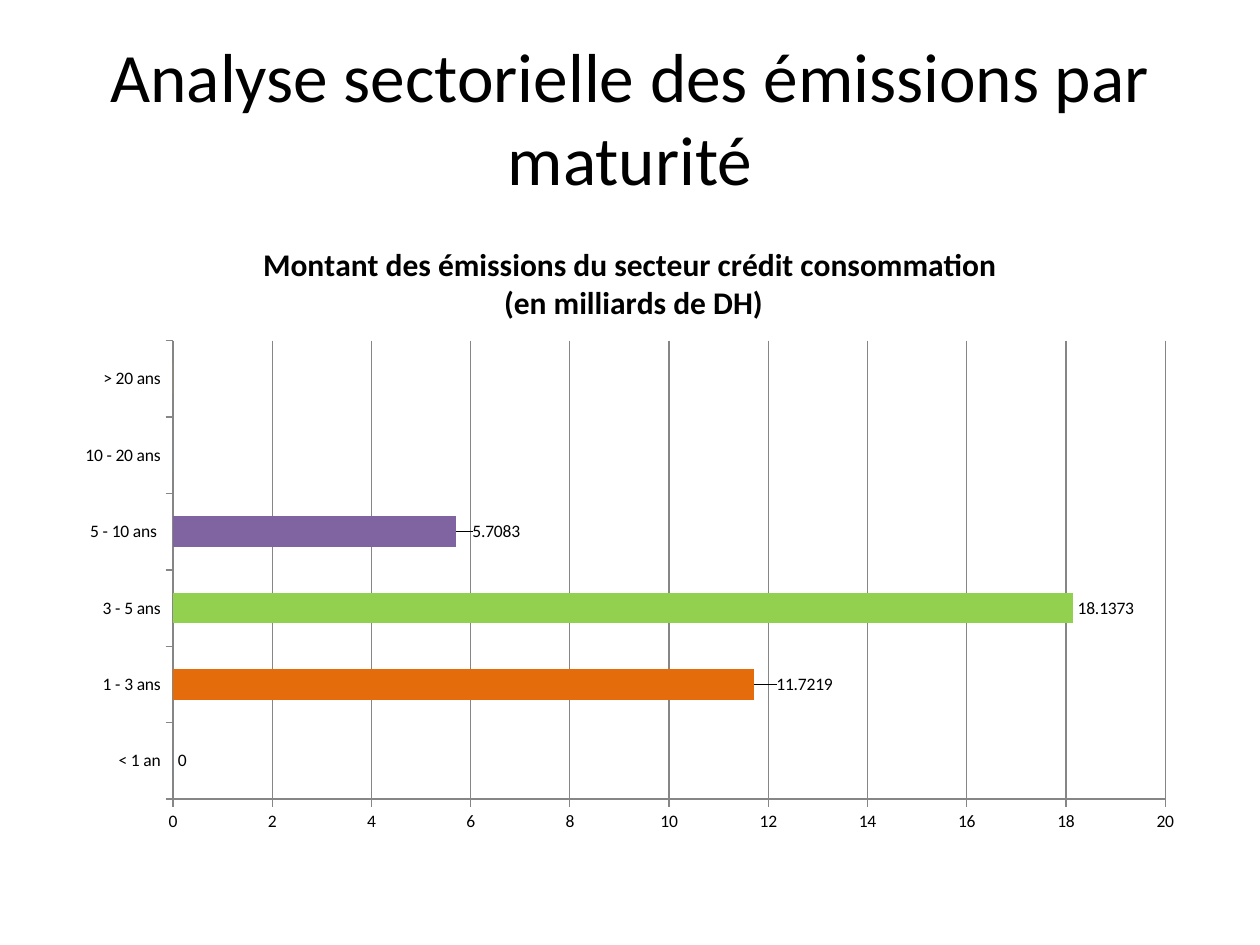
from dataclasses import dataclass

from pptx import Presentation
from pptx.chart.data import CategoryChartData
from pptx.dml.color import RGBColor
from pptx.enum.chart import XL_CHART_TYPE, XL_LABEL_POSITION, XL_TICK_MARK
from pptx.enum.text import MSO_ANCHOR, MSO_AUTO_SIZE, PP_ALIGN
from pptx.oxml import parse_xml
from pptx.util import Inches, Pt

BAR_CLUSTERED = XL_CHART_TYPE.BAR_CLUSTERED
OUTSIDE_END = XL_LABEL_POSITION.OUTSIDE_END
TICK_OUTSIDE = XL_TICK_MARK.OUTSIDE
CHART_NS = 'xmlns:c="http://schemas.openxmlformats.org/drawingml/2006/chart"'
TITLE_ONLY = 5


@dataclass(frozen=True)
class Theme:
    font: str = "Calibri"
    text: RGBColor = RGBColor(0, 0, 0)
    axis: RGBColor = RGBColor(0x86, 0x86, 0x86)
    title_size: Pt = Pt(39.6)
    chart_title_size: Pt = Pt(18)
    chart_size: Pt = Pt(10)


theme = Theme()


def set_font(font, size, bold=False):
    font.name = theme.font
    font.size = size
    font.bold = bold
    font.color.rgb = theme.text


def manual_layout(**values):
    """Return a c:layout element holding the given settings, in order."""
    settings = "".join(f'<c:{name} val="{value}"/>' for name, value in values.items())
    return parse_xml(
        f"<c:layout {CHART_NS}><c:manualLayout>{settings}</c:manualLayout></c:layout>"
    )


presentation = Presentation()
presentation.slide_width = Inches(10)
presentation.slide_height = Inches(7.5)
slide = presentation.slides.add_slide(presentation.slide_layouts[TITLE_ONLY])

# Slide title
title = slide.shapes.title
title.left, title.top = Inches(0.5), Inches(0.3)
title.width, title.height = Inches(9), Inches(1.25)
title.text_frame.text = "Analyse sectorielle des émissions par maturité"
title.text_frame.word_wrap = True
title.text_frame.auto_size = MSO_AUTO_SIZE.NONE
title.text_frame.vertical_anchor = MSO_ANCHOR.MIDDLE
paragraph = title.text_frame.paragraphs[0]
paragraph.alignment = PP_ALIGN.CENTER
set_font(paragraph.font, theme.title_size)

# Maturities: category, amount, bar colour, label shift (None hides the label)
maturities = [
    ("< 1 an", 0, "4F81BD", 0),
    ("1 - 3 ans", 11.7219, "E46C0A", 0.015),
    ("3 - 5 ans", 18.1373, "92D050", 0),
    ("5 - 10 ans ", 5.7083, "8064A2", 0.01),
    ("10 - 20 ans", 0, "4BACC6", None),
    ("> 20 ans", 0, "F79646", None),
]
chart_data = CategoryChartData()
chart_data.categories = [maturity[0] for maturity in maturities]
chart_data.add_series("Series 1", [maturity[1] for maturity in maturities])
chart = slide.shapes.add_chart(
    BAR_CLUSTERED, Inches(0.5), Inches(1.75), Inches(9), Inches(4.95), chart_data
).chart
chart.has_legend = False
set_font(chart.font, theme.chart_size)

# Chart title
title_frame = chart.chart_title.text_frame
title_frame.text = (
    "Montant des émissions du secteur crédit consommation\n (en milliards de DH)"
)
for paragraph in title_frame.paragraphs:
    set_font(paragraph.font, theme.chart_title_size, bold=True)
chart.chart_title.include_in_layout = False

# Axes
chart.value_axis.minimum_scale = 0
chart.value_axis.maximum_scale = 20
chart.value_axis.major_unit = 2
chart.value_axis.has_major_gridlines = True
gridline = chart.value_axis.major_gridlines.format.line
for line in (gridline, chart.value_axis.format.line, chart.category_axis.format.line):
    line.color.rgb = theme.axis
    line.width = Pt(0.75)
for axis in (chart.value_axis, chart.category_axis):
    axis.major_tick_mark = TICK_OUTSIDE

# Bars and value labels
plot = chart.plots[0]
plot.gap_width = 150
plot.vary_by_categories = True
series = plot.series[0]
series.invert_if_negative = False
labels = series.data_labels
labels.show_value = True
labels.position = OUTSIDE_END
set_font(labels.font, theme.chart_size)
label_list = series._element.find("{*}dLbls")

label_index = 0
for index, (_, _, color, shift) in enumerate(maturities):
    fill = series.points[index].format.fill
    fill.solid()
    fill.fore_color.rgb = RGBColor.from_string(color)
    if shift == 0:
        continue
    if shift is None:
        label = parse_xml(
            f'<c:dLbl {CHART_NS}><c:idx val="{index}"/><c:delete val="1"/></c:dLbl>'
        )
    else:
        label = parse_xml(
            f'<c:dLbl {CHART_NS}><c:idx val="{index}"/><c:dLblPos val="outEnd"/>'
            '<c:showLegendKey val="0"/><c:showVal val="1"/><c:showCatName val="0"/>'
            '<c:showSerName val="0"/><c:showPercent val="0"/>'
            '<c:showBubbleSize val="0"/></c:dLbl>'
        )
        label.insert(1, manual_layout(x=shift, y=0))
    label_list.insert(label_index, label)
    label_index += 1

# Plot area position, as fractions of the chart
plot_area = chart._chartSpace.find(".//{*}plotArea")
for layout in plot_area.findall("{*}layout"):
    plot_area.remove(layout)
plot_area.insert(0, manual_layout(
    layoutTarget="inner", xMode="edge", yMode="edge",
    x=0.097, y=0.193, w=0.875, h=0.735,
))

presentation.save("out.pptx")
